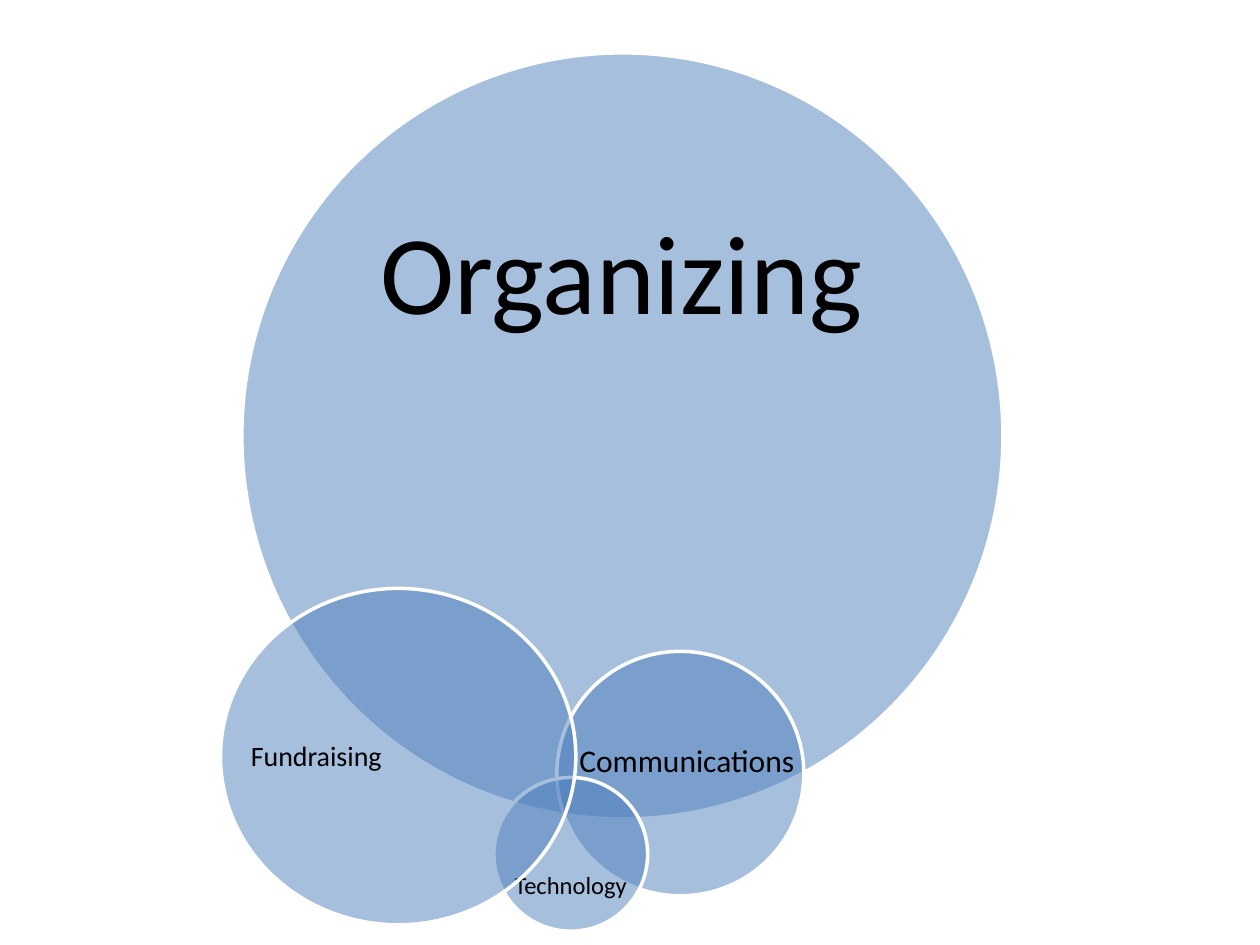
from lxml.etree import SubElement
from pptx import Presentation
from pptx.dml.color import RGBColor
from pptx.enum.shapes import MSO_SHAPE
from pptx.enum.text import MSO_ANCHOR, PP_ALIGN
from pptx.oxml.ns import qn
from pptx.util import Inches, Pt

WIDE, HIGH = Inches(10), Inches(7.5)
BLUE, WHITE, BLACK = "4F81BD", "FFFFFF", "000000"
MID = {"align": PP_ALIGN.CENTER, "anchor": MSO_ANCHOR.MIDDLE, "inset": (0, 0)}
FREE = {"align": PP_ALIGN.LEFT, "anchor": MSO_ANCHOR.TOP, "inset": (0.1, 0.05)}

# Boxes are left, top, width and height in percent of the slide.
CIRCLES = [
    ((19.2, 5.6, 60.4, 81.07), ("Organizing", (26.1, 16.53, 46.4, 25.73), 64, 0.9, MID)),
    ((44.2, 68.93, 19.6, 25.87), None),
    ((39.2, 82.27, 12.2, 16.27), ("Technology", (40.6, 91.07, 9.4, 5.2), 14, 1.0, MID)),
    ((17.5, 62.27, 28.2, 35.6), ("Fundraising", (19.7, 66.4, 10.8, 27.47), 16, 0.9, MID)),
]
LOOSE = ("Communications", (45, 77.73, 21.7, 5.33), 18, 1.0, FREE)


def tint(code):
    return RGBColor.from_string(code)


def place(box):
    return [int(side * part / 100) for side, part in zip((WIDE, HIGH) * 2, box)]


def circle(slide, box):
    disc = slide.shapes.add_shape(MSO_SHAPE.OVAL, *place(box))
    disc.shadow.inherit = False
    disc.fill.solid()
    disc.fill.fore_color.rgb = tint(BLUE)
    color = disc.element.spPr.find(qn("a:solidFill"))[0]
    SubElement(color, qn("a:alpha"), val="50000")
    disc.line.color.rgb = tint(WHITE)
    disc.line.width = Pt(2)


def label(slide, text, box, size, space, style):
    frame = slide.shapes.add_textbox(*place(box)).text_frame
    across, down = map(Inches, style["inset"])
    look = {
        "word_wrap": True,
        "vertical_anchor": style["anchor"],
        "margin_left": across,
        "margin_right": across,
        "margin_top": down,
        "margin_bottom": down,
    }
    for name, value in look.items():
        setattr(frame, name, value)
    line = frame.paragraphs[0]
    line.alignment = style["align"]
    line.line_spacing = space
    run = line.add_run()
    run.text = text
    for name, value in {"name": "Calibri", "size": Pt(size)}.items():
        setattr(run.font, name, value)
    run.font.color.rgb = tint(BLACK)


def main():
    deck = Presentation()
    deck.slide_width, deck.slide_height = WIDE, HIGH
    slide = deck.slides.add_slide(deck.slide_layouts[6])
    for box, words in CIRCLES:
        circle(slide, box)
        if words:
            label(slide, *words)
    label(slide, *LOOSE)
    deck.save("out.pptx")


if __name__ == "__main__":
    main()
